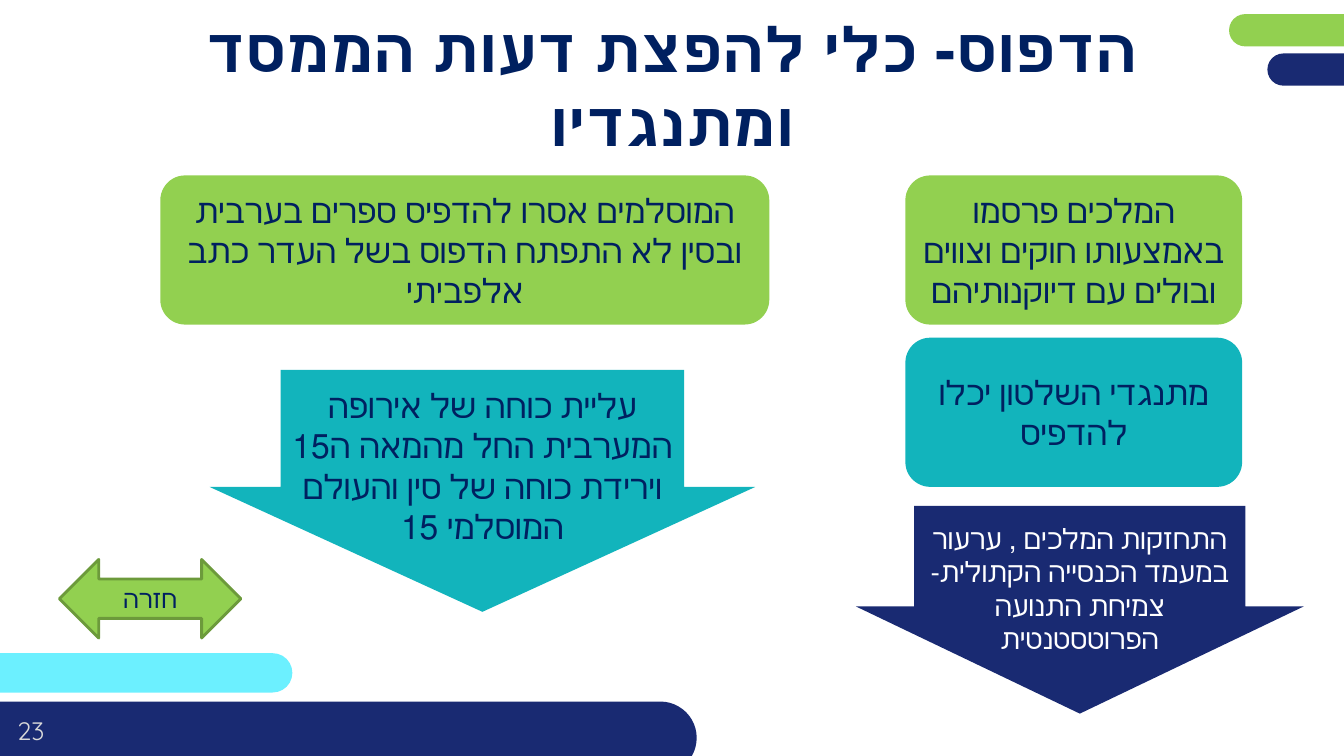
import pptx
import pptx.dml.color
import pptx.enum.shapes
import pptx.enum.text
import pptx.util

RGB = pptx.dml.color.RGBColor
NAVY = RGB(0x19, 0x2A, 0x72)
INK = RGB(0x00, 0x20, 0x60)
GREEN = RGB(0x92, 0xD0, 0x50)
OLIVE = RGB(0x6C, 0x9A, 0x3B)
TEAL = RGB(0x12, 0xB4, 0xBC)
CYAN = RGB(0x6C, 0xF0, 0xFF)
GREY = RGB(0xD9, 0xD9, 0xD9)
WHITE = RGB(0xFF, 0xFF, 0xFF)
SHAPE = pptx.enum.shapes.MSO_SHAPE
ANCHOR = pptx.enum.text.MSO_ANCHOR
EMU_PER_PX = 9144


def px(length):
    return pptx.util.Emu(length * EMU_PER_PX)


def write(frame, text, size=24, color=INK, font="Quicksand", bold=False,
          rtl=True, anchor=ANCHOR.MIDDLE):
    frame.word_wrap = True
    frame.vertical_anchor = anchor
    paragraph = frame.paragraphs[0]
    paragraph.alignment = pptx.enum.text.PP_ALIGN.CENTER
    if rtl:
        paragraph._p.get_or_add_pPr().set("rtl", "1")
    run = paragraph.add_run()
    run.text = text
    run.font.name = font
    run.font.size = pptx.util.Pt(size)
    run.font.bold = bold
    run.font.color.rgb = color


class PrintingSlide:
    def __init__(self, deck):
        self.shapes = deck.slides.add_slide(deck.slide_layouts[6]).shapes

    def block(self, kind, box, fill, adjustments=()):
        block = self.shapes.add_shape(kind, *map(px, box))
        block.shadow.inherit = False
        block.fill.solid()
        block.fill.fore_color.rgb = fill
        block.line.fill.background()
        for index, value in enumerate(adjustments):
            block.adjustments[index] = value
        return block

    def bar(self, box, fill):
        self.block(SHAPE.ROUNDED_RECTANGLE, box, fill, [0.5])

    def label(self, box, text, bottom_inset=0, **style):
        frame = self.shapes.add_textbox(*map(px, box)).text_frame
        frame.margin_left = frame.margin_right = frame.margin_top = 0
        frame.margin_bottom = px(bottom_inset)
        write(frame, text, **style)

    def card(self, box, fill, text):
        card = self.block(SHAPE.FLOWCHART_ALTERNATE_PROCESS, box, fill)
        write(card.text_frame, text)

    def outcome(self, box, fill, text, **style):
        arrow = self.block(SHAPE.DOWN_ARROW, box, fill, [0.74, 0.516])
        arrow.text_frame.margin_top = px(15)
        write(arrow.text_frame, text, anchor=ANCHOR.TOP, **style)

    def return_button(self, box, text):
        button = self.block(SHAPE.LEFT_RIGHT_ARROW, box, GREEN)
        button.line.color.rgb = OLIVE
        button.line.width = pptx.util.Pt(2)
        write(button.text_frame, text, size=18)


def main():
    deck = pptx.Presentation()
    deck.slide_width, deck.slide_height = px(1333), px(750)
    slide = PrintingSlide(deck)

    slide.bar((1257, 53, 172, 32), NAVY)
    slide.bar((1219, 14, 206, 32), GREEN)
    slide.bar((-53, 648, 343, 39), CYAN)
    slide.bar((-107, 696, 798, 72), NAVY)
    slide.label((-14, 696, 89, 57), "23", size=18, color=GREY, rtl=False)
    slide.label((131, 82, 1072, 79), "הדפוס- כלי להפצת דעות הממסד ומתנגדיו",
                bottom_inset=74, size=44, bold=True)

    slide.card((898, 174, 334, 148), GREEN,
               "המלכים פרסמו באמצעותו חוקים וצווים ובולים עם דיוקנותיהם")
    slide.card((898, 335, 334, 148), TEAL, "מתנגדי השלטון יכלו להדפיס")
    slide.card((159, 174, 604, 148), GREEN,
               "המוסלמים אסרו להדפיס ספרים בערבית ובסין לא התפתח הדפוס "
               "בשל העדר כתב אלפביתי")

    slide.outcome((849, 502, 444, 206), NAVY,
                  "התחזקות המלכים , ערעור במעמד הכנסייה הקתולית- "
                  "צמיחת התנועה הפרוטסטנטית", size=20, color=WHITE)
    slide.outcome((208, 367, 541, 240), TEAL,
                  "עליית כוחה של אירופה המערבית החל מהמאה ה15 "
                  "וירידת כוחה של סין והעולם המוסלמי 15")
    slide.return_button((59, 555, 180, 78), "חזרה")

    deck.save("out.pptx")


if __name__ == "__main__":
    main()
